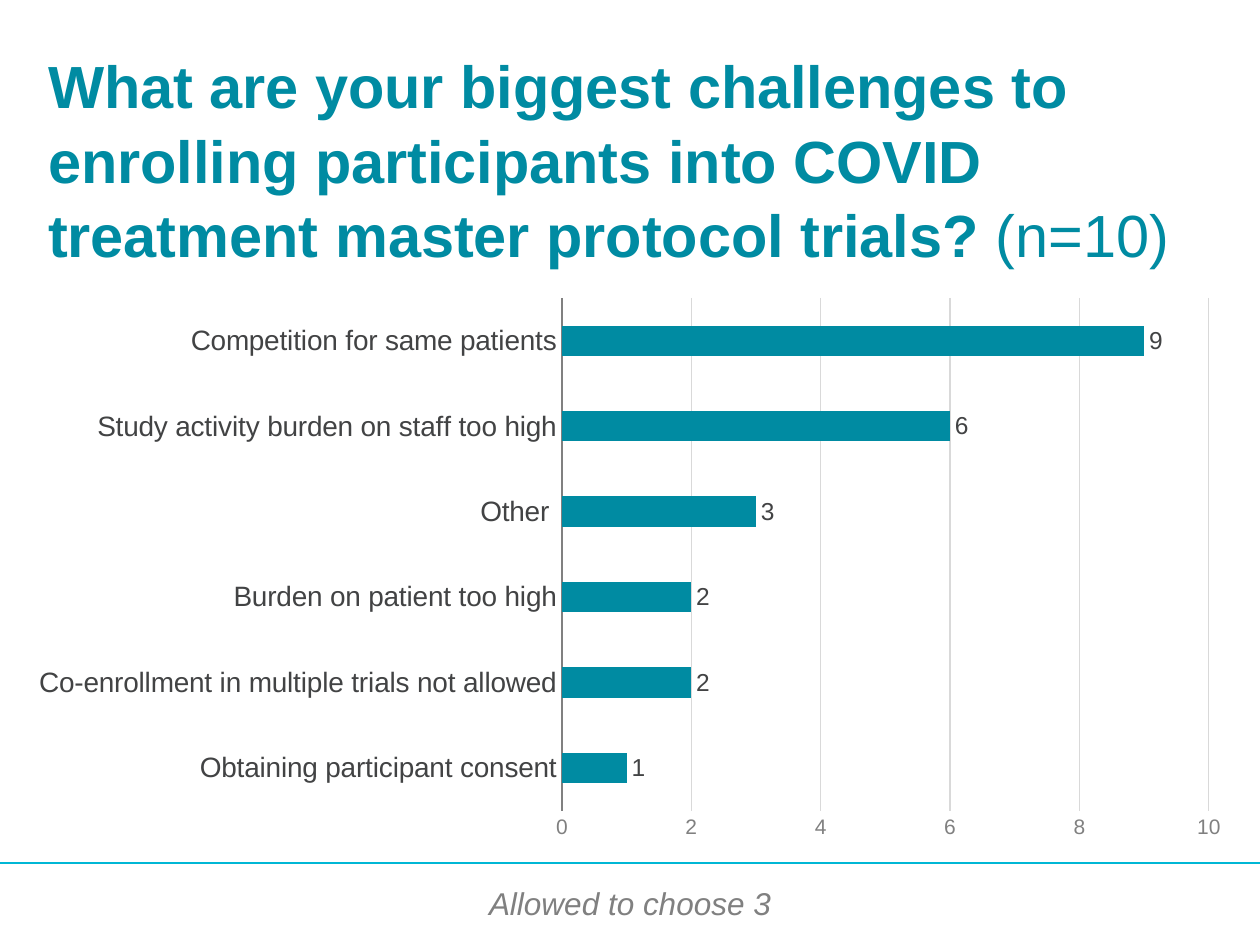
from lxml import etree
from pptx import Presentation
from pptx import util as u
from pptx.chart.data import CategoryChartData
from pptx.dml.color import RGBColor
from pptx.enum import chart as charts, shapes, text
from pptx.oxml import parse_xml
from pptx.oxml.ns import nsdecls, qn

# Content
TITLE = [
    ("What are your biggest challenges to enrolling participants "
     "into COVID treatment master protocol trials? ", True),
    ("(n=10)", False),
]
CHALLENGES = [  # top to bottom
    ("Competition for same patients", 9),
    ("Study activity burden on staff too high", 6),
    ("Other ", 3),
    ("Burden on patient too high", 2),
    ("Co-enrollment in multiple trials not allowed", 2),
    ("Obtaining participant consent", 1),
]
NOTE = "Allowed to choose 3"

# Style
FONT = "Arial"
TEAL = RGBColor(0x00, 0x8B, 0xA2)
CYAN = RGBColor(0x00, 0xB7, 0xD5)
DARK = RGBColor(0x42, 0x43, 0x44)
GRAY = RGBColor(0x80, 0x80, 0x80)
PALE = RGBColor(0xD9, 0xD9, 0xD9)
WHITE = RGBColor(0xFF, 0xFF, 0xFF)

# Geometry in px: left, top, width, height
PX = u.Inches(1) / 126
PAGE = (1260, 945)
TITLE_AREA = (48, 105, 1166, 106)
CHART_AREA = (15, 287, 1230, 563)
PLOT_AREA = (562, 298, 647, 513)
FOOTER_AREA = (0, 861, 1260, 84)
NOTE_AREA = (471, 878, 318, 50)
RULE_Y = 863


def px(*lengths):
    return [u.Emu(round(length * PX)) for length in lengths]


def style(font, size, color):
    font.name = FONT
    font.size = u.Pt(size)
    font.color.rgb = color


def style_line(line, color):
    line.color.rgb = color
    line.width = u.Pt(0.75)


deck = Presentation()
deck.slide_width, deck.slide_height = px(*PAGE)
page = deck.slides.add_slide(deck.slide_layouts[5])

# Footer band and rule
band = page.shapes.add_shape(shapes.MSO_SHAPE.RECTANGLE, *px(*FOOTER_AREA))
band.shadow.inherit = False
band.fill.solid()
band.fill.fore_color.rgb = WHITE
band.line.fill.background()
rule = page.shapes.add_connector(
    shapes.MSO_CONNECTOR.STRAIGHT, *px(0, RULE_Y, PAGE[0], RULE_Y))
style_line(rule.line, CYAN)
etree.SubElement(rule._element.spPr, qn("a:effectLst"))

# Title
title = page.shapes.title
title.left, title.top, title.width, title.height = px(*TITLE_AREA)
frame = title.text_frame
frame.margin_left = frame.margin_right = frame.margin_top = frame.margin_bottom = 0
frame.vertical_anchor = text.MSO_ANCHOR.MIDDLE
frame.auto_size = text.MSO_AUTO_SIZE.NONE
frame.word_wrap = True
para = frame.paragraphs[0]
para.alignment = text.PP_ALIGN.LEFT
para.line_spacing = 1.04
for words, bold in TITLE:
    span = para.add_run()
    span.text = words
    style(span.font, 34, TEAL)
    span.font.bold = bold

# Note below the rule
note = page.shapes.add_textbox(*px(*NOTE_AREA))
note.text_frame.word_wrap = False
para = note.text_frame.paragraphs[0]
para.alignment = text.PP_ALIGN.CENTER
span = para.add_run()
span.text = NOTE
style(span.font, 18, GRAY)
span.font.italic = True

# Bar chart: categories run from the bottom up
data = CategoryChartData(number_format="0")
data.categories = [name for name, _ in reversed(CHALLENGES)]
data.add_series("Series 1", [count for _, count in reversed(CHALLENGES)])
chart = page.shapes.add_chart(
    charts.XL_CHART_TYPE.BAR_CLUSTERED, *px(*CHART_AREA), data).chart
chart.has_legend = False
chart.has_title = False
style(chart.font, 10, DARK)

# Bars and value labels
plot = chart.plots[0]
plot.gap_width = 182
plot.vary_by_categories = False
bars = plot.series[0]
bars.format.fill.solid()
bars.format.fill.fore_color.rgb = TEAL
plot.has_data_labels = True
labels = plot.data_labels
labels.show_value = True
labels.position = charts.XL_LABEL_POSITION.OUTSIDE_END
style(labels.font, 14, DARK)

# Axes
names, counts = chart.category_axis, chart.value_axis
for axis, size, color in ((names, 16, DARK), (counts, 12, GRAY)):
    axis.major_tick_mark = axis.minor_tick_mark = charts.XL_TICK_MARK.NONE
    style(axis.tick_labels.font, size, color)
style_line(names.format.line, GRAY)
names.has_major_gridlines = False
counts.minimum_scale, counts.maximum_scale, counts.major_unit = 0, 10, 2
counts.format.line.fill.background()
counts.has_major_gridlines = True
style_line(counts.major_gridlines.format.line, PALE)

# Fixed inner plot area, as fractions of the chart
left, top, width, height = CHART_AREA
fractions = {
    "x": (PLOT_AREA[0] - left) / width,
    "y": (PLOT_AREA[1] - top) / height,
    "w": PLOT_AREA[2] / width,
    "h": PLOT_AREA[3] / height,
}
modes = '<c:layoutTarget val="inner"/><c:xMode val="edge"/><c:yMode val="edge"/>'
sizes = "".join(f'<c:{key} val="{part:.4f}"/>' for key, part in fractions.items())
plot_area = chart._chartSpace.chart.plotArea
for old in plot_area.findall(qn("c:layout")):
    plot_area.remove(old)
plot_area.insert(0, parse_xml(
    f'<c:layout {nsdecls("c")}><c:manualLayout>{modes}{sizes}'
    "</c:manualLayout></c:layout>"))

deck.save("out.pptx")
